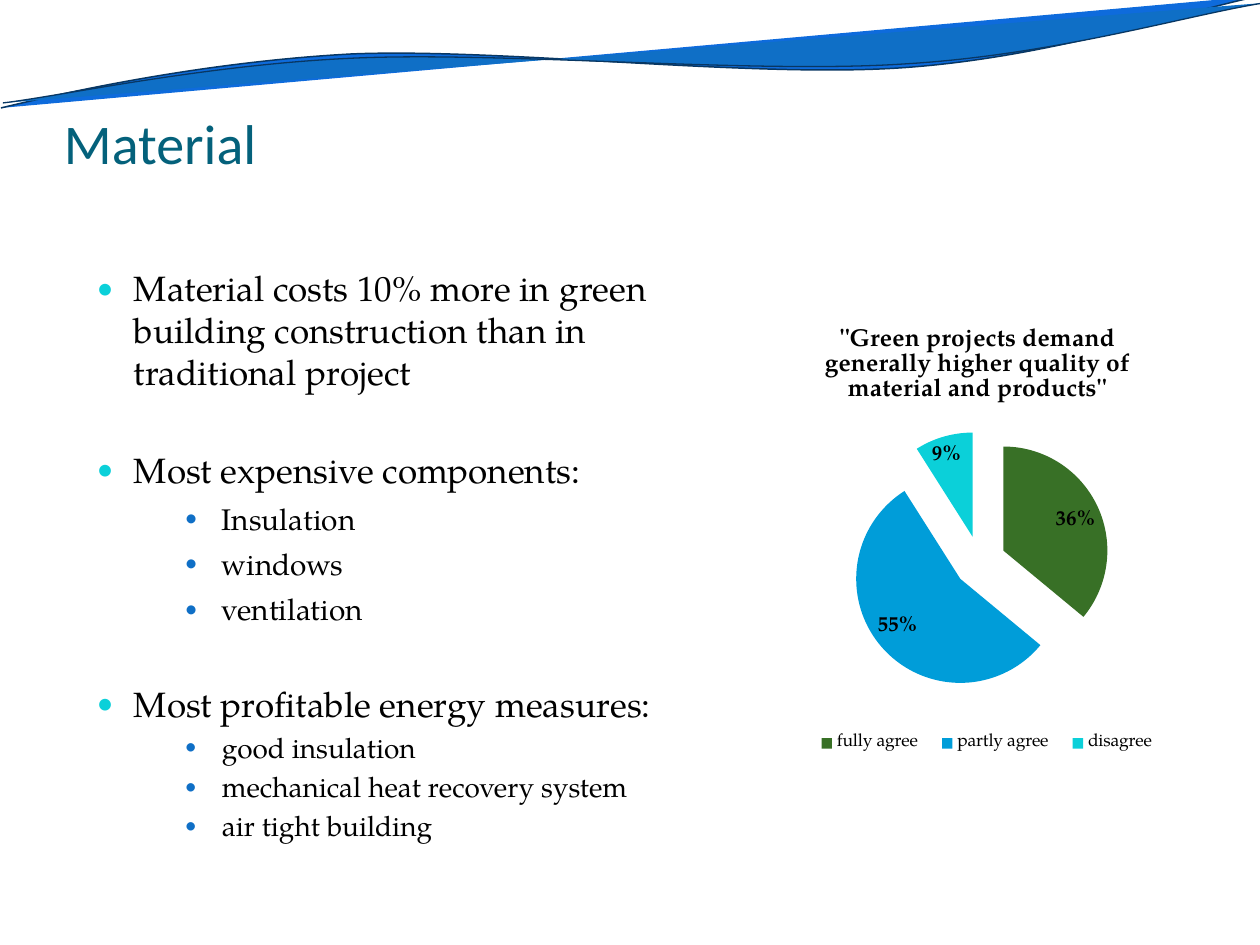
from lxml import etree
from pptx import Presentation
from pptx.chart.data import CategoryChartData
from pptx.dml.color import RGBColor
from pptx.enum.chart import XL_CHART_TYPE, XL_LABEL_POSITION, XL_LEGEND_POSITION
from pptx.enum.text import MSO_ANCHOR
from pptx.oxml import parse_xml
from pptx.oxml.ns import nsdecls, qn
from pptx.util import Pt

PIE = XL_CHART_TYPE.PIE_EXPLODED
BEST_FIT = XL_LABEL_POSITION.BEST_FIT
LEGEND_BOTTOM = XL_LEGEND_POSITION.BOTTOM
BOTTOM = MSO_ANCHOR.BOTTOM
PX = 914400 / 126
SERIF = "TeX Gyre Pagella"
SANS = "Calibri"
COLORS = {
    "text": "000000", "title": "04617B", "wave_back": "0E6BDC",
    "wave_front": "0F6FC6", "wave_line": "083763",
    "green": "387026", "blue": "009DD9", "cyan": "0BD0D9",
}


def style_font(font, size, color="text", name=SERIF, bold=False):
    font.size = Pt(size)
    font.name = name
    font.bold = bold
    font.color.rgb = RGBColor.from_string(COLORS[color])


def set_layout(element, inner=False, **fractions):
    for old in element.findall(qn("c:layout")):
        element.remove(old)
    layout = parse_xml(f"<c:layout {nsdecls('c')}><c:manualLayout/></c:layout>")
    values = {"layoutTarget": "inner"} if inner else {}
    values |= {"xMode": "edge", "yMode": "edge"} | fractions
    for tag, value in values.items():
        etree.SubElement(layout[0], qn(f"c:{tag}")).set("val", str(value))
    return layout


presentation = Presentation()
presentation.slide_width = round(1260 * PX)
presentation.slide_height = round(945 * PX)
slide = presentation.slides.add_slide(presentation.slide_layouts[6])

waves = [
    ("wave_back", 0.85, [(1, 108), (63, 93), (202, 62), (352, 54), (501, 48),
                         (748, 78), (900, 68), (1052, 58), (1186, 11), (1260, -4)]),
    ("wave_front", 0.75, [(3, 103), (62, 96), (209, 64), (359, 58), (510, 52),
                          (755, 74), (905, 64), (1056, 55), (1188, 15), (1264, 3)]),
]
for color, line_width, controls in waves:
    builder = slide.shapes.build_freeform(*controls[0], scale=PX)
    builder.add_line_segments(controls[1:], close=False)
    wave = builder.convert_to_shape()
    segments = list(wave._element.iter(qn("a:lnTo")))
    for start in range(0, len(segments), 3):
        curve = etree.Element(qn("a:cubicBezTo"))
        segments[start].addprevious(curve)
        for segment in segments[start:start + 3]:
            curve.append(segment[0])
            segment.getparent().remove(segment)
    wave.shadow.inherit = False
    wave.fill.solid()
    wave.fill.fore_color.rgb = RGBColor.from_string(COLORS[color])
    wave.line.color.rgb = RGBColor.from_string(COLORS["wave_line"])
    wave.line.width = Pt(line_width)

chart_data = CategoryChartData(number_format="General")
chart_data.categories = ["fully agree", "partly agree", "disagree"]
chart_data.add_series("Series 1", [36, 55, 9])
chart_box = [round(value * PX) for value in (748, 304, 459, 491)]
chart = slide.shapes.add_chart(PIE, *chart_box, chart_data).chart
style_font(chart.font, 18)
chart.has_title = True
title_frame = chart.chart_title.text_frame
title_frame.text = '"Green projects demand generally higher quality of material and products"'
style_font(title_frame.paragraphs[0].font, 14, bold=True)
chart.has_legend = True
chart.legend.position = LEGEND_BOTTOM
chart.legend.include_in_layout = False
style_font(chart.legend.font, 10)

plot = chart.plots[0]
plot.vary_by_categories = True
series = plot.series[0]
for explosion in series._element.findall(qn("c:explosion")):
    series._element.remove(explosion)
series._element.find(qn("c:tx")).addnext(
    parse_xml(f'<c:explosion {nsdecls("c")} val="25"/>'))
for index, color in enumerate(("green", "blue", "cyan")):
    slice_format = series.points[index].format
    slice_format.fill.solid()
    slice_format.fill.fore_color.rgb = RGBColor.from_string(COLORS[color])
    slice_format.line.fill.background()
labels = series.data_labels
labels.show_percentage = True
labels.show_value = False
labels.number_format = "0%"
labels.number_format_is_linked = False
labels.position = BEST_FIT
style_font(labels.font, 12, bold=True)

plot_area = plot._element.getparent()
plot_area.insert(0, set_layout(plot_area, inner=True, x=0.11, y=0.26, w=0.79, h=0.53))
legend = chart.legend._element
legend_layout = set_layout(legend, x=0.12, y=0.86, w=0.8, h=0.07)
legend.find(qn("c:legendPos")).addnext(legend_layout)

body = slide.shapes.add_textbox(*[round(value * PX) for value in (84, 255, 615, 655)])
frame = body.text_frame
frame.word_wrap = True
frame.margin_left = frame.margin_bottom = round(13 * PX)
frame.margin_top = round(12 * PX)
frame.margin_right = round(1 * PX)
lines = [
    ("Material costs 10% more in green building construction than in traditional project", 0, 20, 0, 1),
    ("Most expensive components:", 0, 20, 31.5, 1),
    ("Insulation", 1, 17, 3.8, 1.1),
    ("windows", 1, 17, 3.4, 1.1),
    ("ventilation", 1, 17, 3.4, 1.1),
    ("Most profitable energy measures:", 0, 20, 32, 1),
    ("good insulation", 1, 16, 3.2, 1),
    ("mechanical heat recovery system", 1, 16, 3.2, 1),
    ("air tight building", 1, 16, 3.2, 1),
]
bullets = [(37, "cyan", 95), (125, "wave_front", 85)]
for index, (text, level, size, space_before, line_spacing) in enumerate(lines):
    paragraph = frame.add_paragraph() if index else frame.paragraphs[0]
    paragraph.text = text
    paragraph.level = level
    indent, color, percent = bullets[level]
    properties = paragraph._p.get_or_add_pPr()
    properties.set("marL", str(round(indent * PX)))
    properties.set("indent", str(round(-37 * PX)))
    for xml in (
        f'<a:buClr {nsdecls("a")}><a:srgbClr val="{COLORS[color]}"/></a:buClr>',
        f'<a:buSzPct {nsdecls("a")} val="{percent * 1000}"/>',
        f'<a:buFont {nsdecls("a")} typeface="{SANS}"/>',
        f'<a:buChar {nsdecls("a")} char="•"/>',
    ):
        properties.append(parse_xml(xml))
    paragraph.space_before = Pt(space_before)
    paragraph.line_spacing = line_spacing
    style_font(paragraph.font, size)

title = slide.shapes.add_textbox(*[round(value * PX) for value in (64, 76, 1081, 100)])
frame = title.text_frame
frame.word_wrap = True
frame.vertical_anchor = BOTTOM
frame.margin_left = frame.margin_right = frame.margin_bottom = 0
frame.margin_top = round(6 * PX)
frame.text = "Material"
style_font(frame.paragraphs[0].font, 32, "title", SANS)

presentation.save("out.pptx")
